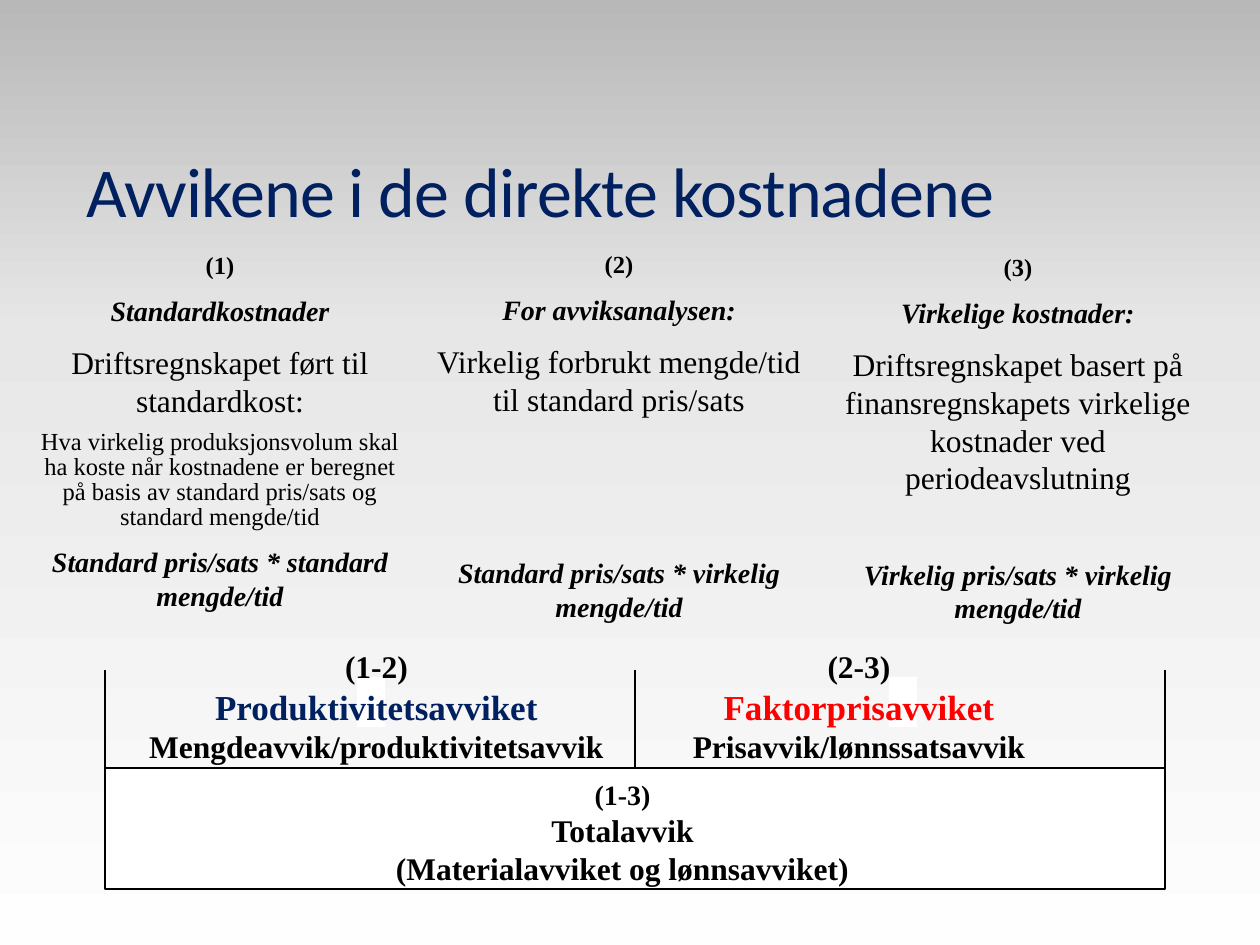
import copy
from pptx import Presentation, util as u
from pptx.dml import color
from pptx.enum import shapes, text
from pptx.oxml.ns import qn

SCALE = 914400 / 126
SERIF = "Times New Roman"


def px(*values):
    return [round(v * SCALE) for v in values]


def rgb(value):
    return color.RGBColor.from_string(value)


def add_run(p, wording, size, hue="000000", **fmt):
    r = p.add_run()
    r.text = wording
    r.font.color.rgb = rgb(hue)
    for name, value in {"name": SERIF, "size": u.Pt(size), **fmt}.items():
        setattr(r.font, name, value)
    return r


def add_text(s, box, lines, wrap=True):
    tf = s.shapes.add_textbox(*px(*box)).text_frame
    tf.word_wrap = wrap
    for i, (wording, size, fmt, spacing) in enumerate(lines):
        p = tf.add_paragraph() if i else tf.paragraphs[0]
        p.alignment = text.PP_ALIGN.CENTER
        for name, value in spacing.items():
            setattr(p, name, value)
        add_run(p, wording, size, **fmt)


def add_background(s):
    fill = s.background.fill
    fill.gradient()
    fill.gradient_angle = 270
    stops = s._element.find(".//" + qn("a:gsLst"))
    stops.insert(1, copy.deepcopy(stops[0]))
    for stop, (position, hue) in zip(
            fill.gradient_stops, [(0, "B8B8B8"), (0.35, "E7E7E7"), (1, "FEFEFE")]):
        stop.position = position
        stop.color.rgb = rgb(hue)


def add_title(s, box, wording):
    sp = s.shapes.title
    sp.left, sp.top, sp.width, sp.height = px(*box)
    tf = sp.text_frame
    tf.vertical_anchor = text.MSO_ANCHOR.BOTTOM
    tf.auto_size = text.MSO_AUTO_SIZE.NONE
    p = tf.paragraphs[0]
    p.alignment = text.PP_ALIGN.LEFT
    p.line_spacing = 0.85
    r = add_run(p, wording, 40, "002060", name="Calibri")
    r._r.get_or_add_rPr().set("spc", "-50")


def add_column(s, box, number, heading, body, formula, gap, detail=None):
    strong = {"bold": True, "italic": True}
    lines = [(number, 14, {"bold": True}, {}),
             (heading, 16, strong, {"space_before": u.Pt(8)}),
             (body, 18, {}, {"space_before": u.Pt(9)})]
    if detail:
        lines.append((detail, 14, {}, {"space_before": u.Pt(7), "line_spacing": 0.85}))
    lines.append((formula, 16, strong, {"space_before": u.Pt(gap)}))
    add_text(s, box, lines)


def add_rect(s, box, outlined=False):
    sp = s.shapes.add_shape(shapes.MSO_SHAPE.RECTANGLE, *px(*box))
    sp.shadow.inherit = False
    sp.fill.solid()
    sp.fill.fore_color.rgb = rgb("FFFFFF")
    if outlined:
        sp.line.color.rgb = rgb("000000")
        sp.line.width = u.Pt(1)
    else:
        sp.line.fill.background()


def add_bracket(s, x, y, w, h, tick):
    add_rect(s, (x, y + tick, w, h - tick), outlined=True)
    half = w // 2
    for i in range(2):
        add_rect(s, (x + 252 + i * (half + 2), y + 7, 28, 50))
    for i in range(3):
        line_x = x + i * half
        line = s.shapes.add_connector(
            shapes.MSO_CONNECTOR.STRAIGHT, *px(line_x, y + tick, line_x, y))
        line.line.color.rgb = rgb("000000")
        line.line.width = u.Pt(1)
        line._element.spPr.append(line._element.makeelement(qn("a:effectLst")))


def add_variance(s, box, lines, wrap=False):
    add_text(s, box, [(wording, size, {"bold": True, "hue": hue}, {})
                      for wording, size, hue in lines], wrap)


def main():
    prs = Presentation()
    prs.slide_width, prs.slide_height = px(1260, 945)
    s = prs.slides.add_slide(prs.slide_layouts[5])
    add_background(s)
    add_title(s, (74, 86, 1154, 152), "Avvikene i de direkte kostnadene")

    add_column(s, (21, 244, 398, 386), "(1)", "Standardkostnader",
               "Driftsregnskapet ført til standardkost:",
               "Standard pris/sats * standard mengde/tid", 8,
               "Hva virkelig produksjonsvolum skal ha koste når kostnadene er "
               "beregnet på basis av standard pris/sats og standard mengde/tid")
    add_column(s, (420, 243, 398, 403), "(2)", "For avviksanalysen:",
               "Virkelig forbrukt mengde/tid til standard pris/sats",
               "Standard pris/sats * virkelig mengde/tid", 79)
    add_column(s, (819, 246, 398, 397), "(3)", "Virkelige kostnader:",
               "Driftsregnskapet basert på finansregnskapets virkelige "
               "kostnader ved periodeavslutning",
               "Virkelig pris/sats * virkelig mengde/tid", 35)

    add_bracket(s, 105, 670, 1060, 219, 98)
    add_variance(s, (123, 641, 507, 131), [
        ("(1-2)", 18, "000000"),
        ("Produktivitetsavviket", 20, "002060"),
        ("Mengdeavvik/produktivitetsavvik", 18, "000000")], wrap=True)
    add_variance(s, (678, 641, 362, 170), [
        ("(2-3)", 18, "000000"),
        ("Faktorprisavviket", 20, "FF0000"),
        ("Prisavvik/lønnssatsavvik", 18, "000000")])
    add_variance(s, (383, 771, 479, 160), [
        ("(1-3)", 16, "000000"),
        ("Totalavvik", 18, "000000"),
        ("(Materialavviket og lønnsavviket)", 18, "000000")])
    prs.save("out.pptx")


if __name__ == "__main__":
    main()
